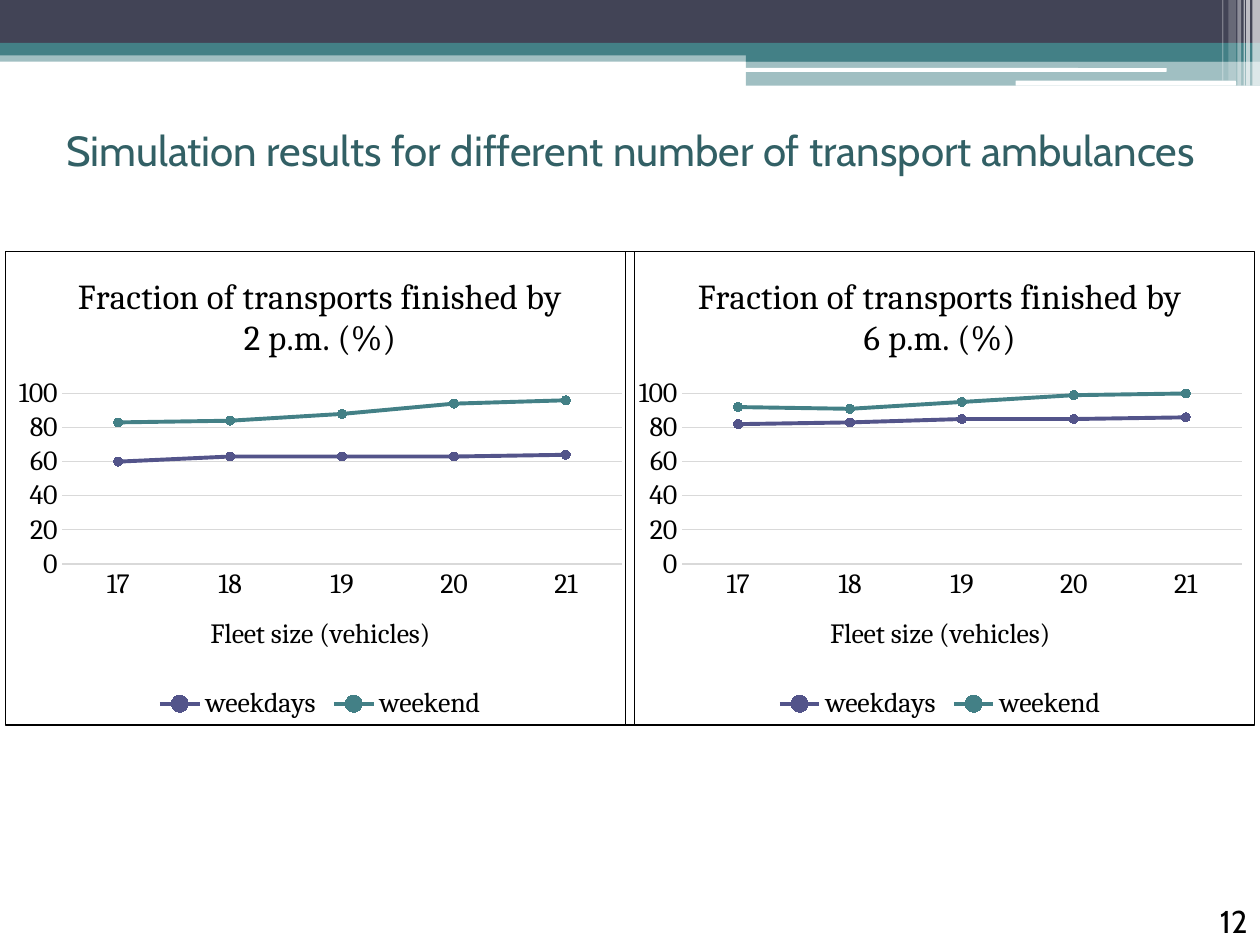
from lxml.etree import SubElement
from pptx import Presentation
from pptx.chart.data import CategoryChartData
from pptx.dml.color import RGBColor
from pptx.enum.chart import XL_CHART_TYPE, XL_LEGEND_POSITION, XL_MARKER_STYLE, XL_TICK_MARK
from pptx.enum.shapes import MSO_SHAPE
from pptx.enum.text import MSO_ANCHOR, PP_ALIGN
from pptx.oxml import parse_xml
from pptx.oxml.ns import nsdecls, qn
from pptx.util import Inches, Pt

# Content
HEADING = "Simulation results for different number of transport ambulances"
PAGE_NUMBER = "12"
AXIS_CAPTION = "Fleet size (vehicles)"
FLEET_SIZES = ["17", "18", "19", "20", "21"]
DAY_COLORS = {"weekdays": "53548A", "weekend": "438086"}
RESULTS = [
    ("Fraction of transports finished by 2 p.m. (%)",
     {"weekdays": [60, 63, 63, 63, 64], "weekend": [83, 84, 88, 94, 96]}),
    ("Fraction of transports finished by 6 p.m. (%)",
     {"weekdays": [82, 83, 85, 85, 86], "weekend": [92, 91, 95, 99, 100]}),
]

# Look
SLATE, TEAL, WHITE, BLACK, GRID = "424456", "438086", "FFFFFF", "000000", "D9D9D9"
BANDS = [  # left, top, width, height, colour, opacity %
    (0, 0.4, 10, 0.09, TEAL, 50),
    (0, 0, 10, 0.34, SLATE, 100),
    (0, 0.34, 10, 0.1, TEAL, 100),
    (5.92, 0.39, 4.08, 0.1, TEAL, 100),
    (5.92, 0.48, 4.08, 0.2, TEAL, 50),
]
SLOTS = [(5.91, 0.54, 3.35, 0.03), (8.06, 0.64, 1.75, 0.04)]
STRIPES = [  # left, width, height, opacity %
    (9.94, 0.06, 0.68, 65), (9.89, 0.03, 0.68, 65), (9.87, 0.01, 0.68, 60),
    (9.82, 0.03, 0.68, 40), (9.75, 0.06, 0.64, 20), (9.7, 0.01, 0.64, 30),
]
CHART_LEFT, CHART_TOP, CHART_STEP = 0.04, 1.99, 4.92
CHART_WIDTH, CHART_HEIGHT = 5, 3.77
PLOT_AREA = {"x": 0.09, "y": 0.3, "w": 0.89, "h": 0.36}
CHART_TEXT = {"name": "Cambria", "size": Pt(16), "bold": False}
CHART_HEADING = {**CHART_TEXT, "size": Pt(20)}
HEADING_TEXT = {"name": "Cabin", "size": Pt(24), "bold": False}
NUMBER_TEXT = {"name": "Cabin", "size": Pt(18)}
VALUE_SCALE = {"minimum_scale": 0, "maximum_scale": 100, "major_unit": 20,
               "has_major_gridlines": True}


def rgb(color):
    return RGBColor.from_string(color)


def assign(target, values):
    for name, value in values.items():
        setattr(target, name, value)


def style_font(font, values, color=BLACK):
    assign(font, values)
    font.color.rgb = rgb(color)


def style_line(line, color, width):
    line.color.rgb = rgb(color)
    line.width = Pt(width)


def add_band(slide, box, color, opacity=100, kind=MSO_SHAPE.RECTANGLE):
    band = slide.shapes.add_shape(kind, *map(Inches, box))
    band.shadow.inherit = False
    band.line.fill.background()
    band.fill.solid()
    band.fill.fore_color.rgb = rgb(color)
    if opacity < 100:
        shade = band.fill._xPr.find(qn("a:solidFill"))[0]
        SubElement(shade, qn("a:alpha"), val=str(opacity * 1000))


def write_line(frame, text, align, values, color):
    frame.text = text
    frame.paragraphs[0].alignment = align
    style_font(frame.paragraphs[0].runs[0].font, values, color)


def write_chart_title(owner, text, values):
    write_line(owner.text_frame, text, PP_ALIGN.CENTER, values, BLACK)


def place_plot(chart):
    plot_area = chart._chartSpace.chart.plotArea
    for layout in plot_area.findall(qn("c:layout")):
        plot_area.remove(layout)
    edges = "".join(f'<c:{edge}Mode val="edge"/>' for edge in "xy")
    sizes = "".join(f'<c:{side} val="{share}"/>' for side, share in PLOT_AREA.items())
    plot_area.insert(0, parse_xml(
        f'<c:layout {nsdecls("c")}><c:manualLayout><c:layoutTarget val="inner"/>'
        f"{edges}{sizes}</c:manualLayout></c:layout>"))


def add_border(chart):
    chart._chartSpace.chart.addnext(parse_xml(
        f'<c:spPr {nsdecls("c", "a")}><a:noFill/><a:ln w="{Pt(0.75)}"><a:solidFill>'
        f'<a:srgbClr val="{BLACK}"/></a:solidFill></a:ln></c:spPr>'))


def add_result_chart(slide, left, caption, fractions):
    data = CategoryChartData()
    data.categories = FLEET_SIZES
    for day, percents in fractions.items():
        data.add_series(day, percents)
    box = map(Inches, (left, CHART_TOP, CHART_WIDTH, CHART_HEIGHT))
    chart = slide.shapes.add_chart(XL_CHART_TYPE.LINE_MARKERS, *box, data).chart
    style_font(chart.font, CHART_TEXT)
    write_chart_title(chart.chart_title, caption, CHART_HEADING)
    chart.chart_title.include_in_layout = False

    # Axes
    fleet, percent = chart.category_axis, chart.value_axis
    for axis in (fleet, percent):
        axis.major_tick_mark = axis.minor_tick_mark = XL_TICK_MARK.NONE
        style_font(axis.tick_labels.font, CHART_TEXT)
    write_chart_title(fleet.axis_title, AXIS_CAPTION, CHART_TEXT)
    style_line(fleet.format.line, GRID, 0.75)
    assign(percent, VALUE_SCALE)
    style_line(percent.major_gridlines.format.line, GRID, 0.75)
    percent.format.line.fill.background()

    # Legend
    chart.has_legend = True
    assign(chart.legend, {"position": XL_LEGEND_POSITION.BOTTOM, "include_in_layout": False})
    style_font(chart.legend.font, CHART_TEXT)

    # Lines
    chart.plots[0].vary_by_categories = False
    for days in chart.plots[0].series:
        color = DAY_COLORS[days.name]
        days.smooth = False
        style_line(days.format.line, color, 2.25)
        assign(days.marker, {"style": XL_MARKER_STYLE.CIRCLE, "size": 5})
        days.marker.format.fill.solid()
        days.marker.format.fill.fore_color.rgb = rgb(color)
        style_line(days.marker.format.line, color, 0.75)
    place_plot(chart)
    add_border(chart)


def main():
    deck = Presentation()
    assign(deck, {"slide_width": Inches(10), "slide_height": Inches(7.5)})
    slide = deck.slides.add_slide(deck.slide_layouts[5])

    # Header decoration
    for *box, color, opacity in BANDS:
        add_band(slide, box, color, opacity)
    for box in SLOTS:
        add_band(slide, box, WHITE, kind=MSO_SHAPE.ROUNDED_RECTANGLE)
    for left, width, height, opacity in STRIPES:
        add_band(slide, (left, 0, width, height), WHITE, opacity)

    # Heading
    heading = slide.shapes.title
    assign(heading, {"left": Inches(0.28), "top": Inches(0.94),
                     "width": Inches(9.45), "height": Inches(1.4)})
    assign(heading.text_frame, {"vertical_anchor": MSO_ANCHOR.TOP, "word_wrap": True})
    write_line(heading.text_frame, HEADING, PP_ALIGN.CENTER, HEADING_TEXT, "326065")

    # Charts
    for place, (caption, fractions) in enumerate(RESULTS):
        add_result_chart(slide, CHART_LEFT + place * CHART_STEP, caption, fractions)

    # Page number
    number = slide.shapes.add_textbox(*map(Inches, (9.33, 7.11, 0.67, 0.4))).text_frame
    number.word_wrap = True
    write_line(number, PAGE_NUMBER, PP_ALIGN.RIGHT, NUMBER_TEXT, BLACK)

    deck.save("out.pptx")


if __name__ == "__main__":
    main()
